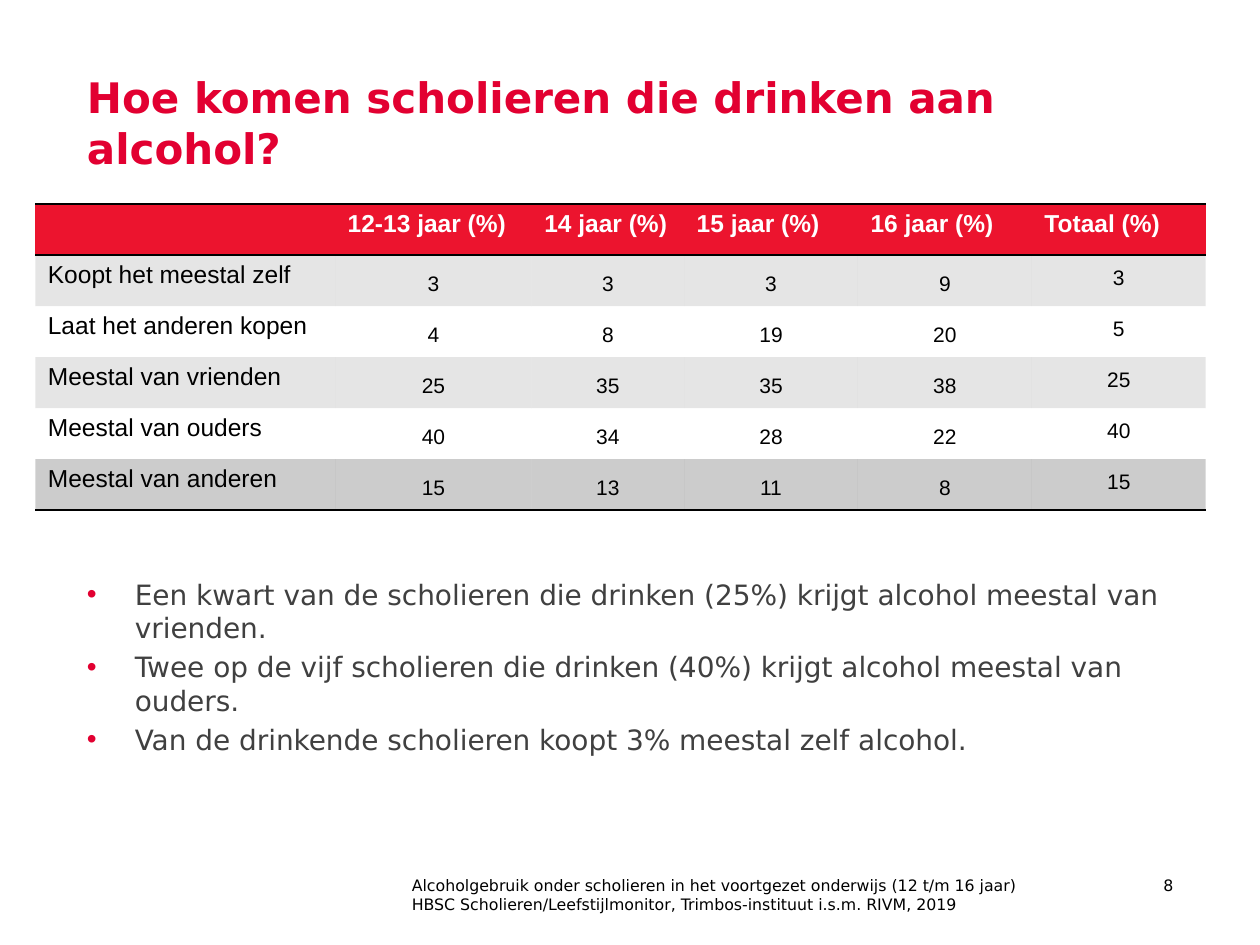
from dataclasses import dataclass

from lxml import etree
from pptx import Presentation
from pptx.dml.color import RGBColor
from pptx.enum.text import MSO_ANCHOR, MSO_AUTO_SIZE, PP_ALIGN
from pptx.oxml.ns import qn
from pptx.util import Inches, Pt

LEFT, CENTER, RIGHT = PP_ALIGN.LEFT, PP_ALIGN.CENTER, PP_ALIGN.RIGHT
TOP, MIDDLE = MSO_ANCHOR.TOP, MSO_ANCHOR.MIDDLE
NO_FIT = MSO_AUTO_SIZE.NONE
NO_GRID = "{2D5ABB26-0587-4C30-8999-92F81FD0307C}"


@dataclass(frozen=True)
class Font:
    name: str
    size: int
    color: str
    bold: bool = False


@dataclass(frozen=True)
class Theme:
    red: str = "E20031"
    head_fill: str = "EC142E"
    band: str = "808080"
    black: str = "000000"
    tint: int = 20
    title: Font = Font("DejaVu Sans", 24, "E20031", True)
    body: Font = Font("DejaVu Sans", 16, "404040")
    foot: Font = Font("DejaVu Sans", 9, "000000")
    head: Font = Font("Arial", 14, "FFFFFF", True)
    label: Font = Font("Arial", 14, "000000")
    value: Font = Font("Arial", 12, "000000")


@dataclass(frozen=True)
class Box:
    left: float
    top: float
    width: float
    height: float

    def lengths(self) -> tuple:
        return tuple(map(Inches, (self.left, self.top, self.width, self.height)))


@dataclass(frozen=True)
class Row:
    label: str
    values: tuple


THEME = Theme()
HEADS = ("", "12-13 jaar (%)", "14 jaar (%)", "15 jaar (%)", "16 jaar (%)", "Totaal (%)")
ROWS = (
    Row("Koopt het meestal zelf", (3, 3, 3, 9, 3)),
    Row("Laat het anderen kopen", (4, 8, 19, 20, 5)),
    Row("Meestal van vrienden", (25, 35, 35, 38, 25)),
    Row("Meestal van ouders", (40, 34, 28, 22, 40)),
    Row("Meestal van anderen", (15, 13, 11, 8, 15)),
)
WIDTHS = (2.38, 1.56, 1.21, 1.38, 1.38, 1.38)
POINTS = (
    "Een kwart van de scholieren die drinken (25%) krijgt alcohol meestal van vrienden.",
    "Twee op de vijf scholieren die drinken (40%) krijgt alcohol meestal van ouders.",
    "Van de drinkende scholieren koopt 3% meestal zelf alcohol.",
)
SOURCE = (
    "Alcoholgebruik onder scholieren in het voortgezet onderwijs (12 t/m 16 jaar)",
    "HBSC Scholieren/Leefstijlmonitor, Trimbos-instituut i.s.m. RIVM, 2019",
)


def add_run(para, text: str, font: Font) -> None:
    run = para.add_run()
    run.text = text
    run.font.name = font.name
    run.font.size = Pt(font.size)
    run.font.bold = font.bold
    run.font.color.rgb = RGBColor.from_string(font.color)


def add_lines(frame, lines: tuple, font: Font, align=LEFT) -> list:
    """Fill a text frame, one paragraph a line, and return the paragraphs."""
    frame.word_wrap = True
    frame.auto_size = NO_FIT
    frame.vertical_anchor = TOP
    paras = []
    for i, line in enumerate(lines):
        para = frame.add_paragraph() if i else frame.paragraphs[0]
        para.alignment = align
        add_run(para, line, font)
        paras.append(para)
    return paras


def place(shape, box: Box) -> None:
    shape.left, shape.top, shape.width, shape.height = box.lengths()


def add_text(slide, box: Box, lines: tuple, font: Font, align=LEFT) -> None:
    add_lines(slide.shapes.add_textbox(*box.lengths()).text_frame, lines, font, align)


def add_bullet(para, color: str) -> None:
    props = para._p.get_or_add_pPr()
    props.set("marL", str(Inches(0.38)))
    props.set("indent", str(-Inches(0.38)))
    tint = etree.SubElement(props, qn("a:buClr"))
    etree.SubElement(tint, qn("a:srgbClr"), val=color)
    etree.SubElement(props, qn("a:buFont"), typeface="Arial")
    etree.SubElement(props, qn("a:buChar"), char="•")


def add_edge(cell, tag: str) -> None:
    """Draw one side of a cell; call before filling it."""
    line = etree.SubElement(cell._tc.get_or_add_tcPr(), qn(tag), w=str(Pt(1)))
    fill = etree.SubElement(line, qn("a:solidFill"))
    etree.SubElement(fill, qn("a:srgbClr"), val=THEME.black)


def fill_cell(cell, color: str | None, alpha: int = 100) -> None:
    if color is None:
        cell.fill.background()
        return
    cell.fill.solid()
    cell.fill.fore_color.rgb = RGBColor.from_string(color)
    if alpha < 100:
        tone = cell._tc.tcPr.find(".//" + qn("a:solidFill") + "[last()]/" + qn("a:srgbClr")) \
            if not cell._tc.tcPr.findall(qn("a:solidFill")) \
            else cell._tc.tcPr.find(qn("a:solidFill"))[0]
        etree.SubElement(tone, qn("a:alpha"), val=str(alpha * 1000))


def set_insets(cell, side: float) -> None:
    cell.margin_left = cell.margin_right = Inches(side)
    cell.margin_top, cell.margin_bottom = Inches(0.06), 0


def add_value(cell, value: int, total: bool) -> None:
    para = cell.text_frame.paragraphs[0]
    para.alignment = CENTER
    add_run(para, str(value), THEME.value)
    set_insets(cell, 0.07 if total else 0.01)
    cell.vertical_anchor = TOP if total else MIDDLE
    if total:
        para.line_spacing = 1.15


def add_grid(slide, box: Box) -> None:
    table = slide.shapes.add_table(len(ROWS) + 1, len(HEADS), *box.lengths()).table
    table._tbl.tblPr.find(qn("a:tableStyleId")).text = NO_GRID
    table.first_row = table.horz_banding = False
    for col, width in zip(table.columns, WIDTHS):
        col.width = Inches(width)
    for c, head in enumerate(HEADS):
        cell = table.cell(0, c)
        if head:
            add_run(cell.text_frame.paragraphs[0], head, THEME.head)
        add_edge(cell, "a:lnT")
        add_edge(cell, "a:lnB")
        fill_cell(cell, THEME.head_fill)
    for r, row in enumerate(ROWS, 1):
        last = r == len(ROWS)
        color = THEME.black if last else THEME.band if r % 2 else None
        add_run(table.cell(r, 0).text_frame.paragraphs[0], row.label, THEME.label)
        for c, value in enumerate(row.values, 1):
            add_value(table.cell(r, c), value, c == len(row.values))
        for c in range(len(HEADS)):
            cell = table.cell(r, c)
            if last:
                add_edge(cell, "a:lnB")
            fill_cell(cell, color, THEME.tint)


def main() -> None:
    deck = Presentation()
    deck.slide_width, deck.slide_height = Inches(10), Inches(7.5)
    slide = deck.slides.add_slide(deck.slide_layouts[1])
    title, body = slide.shapes.title, slide.placeholders[1]

    add_text(slide, Box(3.17, 6.9, 5.69, 0.4), SOURCE, THEME.foot)
    add_text(slide, Box(8.62, 6.9, 0.79, 0.4), ("8",), THEME.foot, RIGHT)
    place(title, Box(0.59, 0.52, 8.82, 1.26))
    add_lines(title.text_frame, ("Hoe komen scholieren die drinken aan alcohol?",), THEME.title)
    place(body, Box(0.59, 4.53, 8.82, 2))
    for i, para in enumerate(add_lines(body.text_frame, POINTS, THEME.body)):
        add_bullet(para, THEME.red)
        para.space_before = Pt(3.2 if i else 0)
    add_grid(slide, Box(0.28, 1.62, 9.3, 2.43))
    deck.save("out.pptx")


if __name__ == "__main__":
    main()
